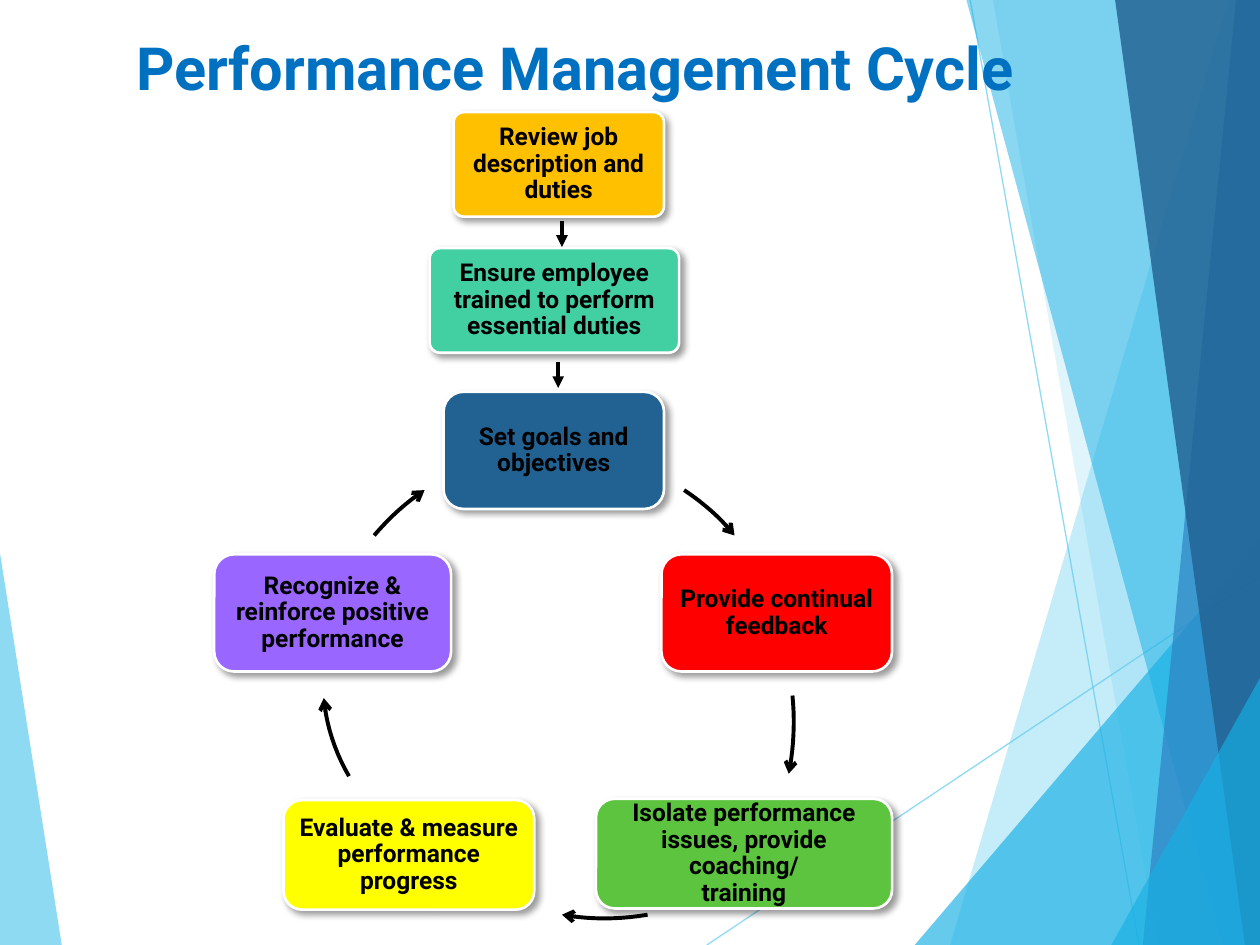
from dataclasses import dataclass

from lxml.etree import SubElement
from pptx import Presentation
from pptx.dml.color import RGBColor
from pptx.enum.shapes import MSO_CONNECTOR, MSO_SHAPE
from pptx.enum.text import MSO_ANCHOR, PP_ALIGN
from pptx.oxml.ns import qn
from pptx.util import Emu, Pt

PX = 9144  # EMU per px, 100 px to the inch
WIDTH, HEIGHT = 1000, 750


@dataclass(frozen=True)
class Theme:
    font: str = "Roboto"
    title_size: int = 34
    step_size: int = 14
    title: str = "0070C0"
    ink: str = "000000"
    edge: str = "FFFFFF"
    sky: str = "5FCBEF"
    cyan: str = "17B0E4"
    blue: str = "2E83C3"
    navy: str = "226292"


T = Theme()


def px(n):
    return Emu(round(n * PX))


def rgb(color):
    return RGBColor.from_string(color)


def set_alpha(fill, percent):
    fill._xPr.find(".//" + qn("a:srgbClr")).append(
        fill._xPr.makeelement(qn("a:alpha"), {"val": str(percent * 1000)}))


def set_line(shape, color, width, head=None):
    shape.line.color.rgb = rgb(color)
    shape.line.width = Pt(width)
    if head:
        SubElement(shape.line._get_or_add_ln(), qn("a:tailEnd"), type=head)


def add_shadow(shape):
    shape.shadow.inherit = False
    effects = shape._element.spPr.find(qn("a:effectLst"))
    shadow = SubElement(effects, qn("a:outerShdw"), blurRad=str(Pt(4)),
                        dist=str(Pt(3)), dir="2700000", rotWithShape="0")
    color = SubElement(shadow, qn("a:srgbClr"), val=T.ink)
    SubElement(color, qn("a:alpha"), val="40000")


def add_text(tf, lines, size, color):
    tf.word_wrap = True
    for i, line in enumerate(lines):
        p = tf.paragraphs[0] if i == 0 else tf.add_paragraph()
        p.alignment = PP_ALIGN.CENTER
        r = p.add_run()
        r.text = line
        r.font.name, r.font.size, r.font.bold = T.font, Pt(size), True
        r.font.color.rgb = rgb(color)


def add_outline(s, points, close):
    (x, y), *rest = points
    builder = s.shapes.build_freeform(px(x), px(y))
    builder.add_line_segments([(px(a), px(b)) for a, b in rest], close=close)
    sp = builder.convert_to_shape()
    sp.shadow.inherit = False
    return sp


def add_line(s, x1, y1, x2, y2, color, width, head=None):
    line = s.shapes.add_connector(MSO_CONNECTOR.STRAIGHT,
                                  px(x1), px(y1), px(x2), px(y2))
    set_line(line, color, width, head)
    SubElement(line._element.spPr, qn("a:effectLst"))
    return line


def backdrop(s, w, h):
    """Translucent shards down the right edge and one at the lower left."""
    def shard(points, color, alpha):
        sp = add_outline(s, points, True)
        sp.fill.solid()
        sp.fill.fore_color.rgb = rgb(color)
        set_alpha(sp.fill, alpha)
        sp.line.fill.background()

    shard([(0, 439), (49, h), (0, h)], T.sky, 70)
    for x1, y1, x2, y2 in [(561, h, w, 457), (770, 0, 904, h)]:
        set_alpha(add_line(s, x1, y1, x2, y2, T.sky, 0.75).line.fill, 70)

    # Each shard: top of its slanted side (x, y), foot x, colour, opacity
    for x, y, foot, color, alpha in [
        (975, 0, 754, T.sky, 36), (788, 0, 919, T.sky, 20),
        (w, 429, 726, T.cyan, 66), (767, 0, 970, T.cyan, 50),
        (981, 0, 907, T.blue, 70), (885, 0, 988, T.navy, 82),
        (w, 538, 882, T.cyan, 66),
    ]:
        corner = [(w, y)] if x < w else []
        shard([(x, y), (foot, h), (w, h)] + corner, color, alpha)


def title(s, x, y, w, h):
    box = s.shapes.add_textbox(px(x), px(y), px(w), px(h))
    add_text(box.text_frame, ["Performance Management Cycle"],
             T.title_size, T.title)


def step(s, x, y, w, h, color, lines, rounding):
    sp = s.shapes.add_shape(MSO_SHAPE.ROUNDED_RECTANGLE,
                            px(x), px(y), px(w), px(h))
    sp.adjustments[0] = rounding
    sp.fill.solid()
    sp.fill.fore_color.rgb = rgb(color)
    set_line(sp, T.edge, 1.5)
    add_shadow(sp)
    tf = sp.text_frame
    tf.margin_left = tf.margin_right = tf.margin_top = tf.margin_bottom = px(6)
    tf.vertical_anchor = MSO_ANCHOR.MIDDLE
    add_text(tf, lines, T.step_size, T.ink)
    for p in tf.paragraphs:
        p.line_spacing = 0.9


def arc_arrow(s, x, y, *curve):
    """Curved arrow from (x, y); curve holds two controls and the end, as offsets."""
    points = [(x, y)] + [(x + dx, y + dy) for dx, dy in curve]

    def at(t):
        weights = ((1 - t) ** 3, 3 * t * (1 - t) ** 2, 3 * t * t * (1 - t), t ** 3)
        return tuple(sum(k * pt[i] for k, pt in zip(weights, points))
                     for i in (0, 1))

    sp = add_outline(s, [at(i / 10) for i in range(11)], False)
    sp.fill.background()
    set_line(sp, T.ink, 2.25, "arrow")


def preparation(s, x, y):
    """Two steps leading down into the cycle."""
    step(s, x + 19, y, 167, 83, "FFC000",
         ["Review job description and duties"], 0.1)
    step(s, x, y + 108, 198, 83, "42D0A2",
         ["Ensure employee trained to perform essential duties"], 0.1)
    for dx, dy in [(105, 86), (102, 198)]:
        add_line(s, x + dx, y + dy, x + dx, y + dy + 21, T.ink, 2.25, "triangle")


def cycle(s, x, y):
    """Five steps clockwise from the top, joined by curved arrows."""
    for dx, dy, w, h, color, lines in [
        (182, 0, 175, 93, T.navy, ["Set goals and objectives"]),
        (355, 129, 183, 93, "FF0000", ["Provide continual feedback"]),
        (303, 323, 235, 87, "5CC43E",
         ["Isolate performance issues, provide coaching/", "training"]),
        (55, 324, 199, 87, "FFFF00", ["Evaluate & measure performance progress"]),
        (0, 129, 188, 93, "9966FF", ["Recognize & reinforce positive performance"]),
    ]:
        step(s, x + dx, y + dy, w, h, color, lines, 0.17)

    for dx, dy, *curve in [
        (373, 78, (15, 10), (29, 22), (40, 36)),
        (459, 241, (2, 21), (1, 42), (-3, 62)),
        (344, 415, (-23, 4), (-46, 4), (-68, 0)),
        (107, 305, (-11, -19), (-18, -40), (-20, -62)),
        (127, 114, (12, -14), (25, -26), (40, -36)),
    ]:
        arc_arrow(s, x + dx, y + dy, *curve)


def main():
    prs = Presentation()
    prs.slide_width, prs.slide_height = px(WIDTH), px(HEIGHT)
    s = prs.slides.add_slide(prs.slide_layouts[6])
    backdrop(s, WIDTH, HEIGHT)
    title(s, 69, 20, 775, 144)
    cycle(s, 170, 311)
    preparation(s, 341, 89)
    prs.save("out.pptx")


if __name__ == "__main__":
    main()
